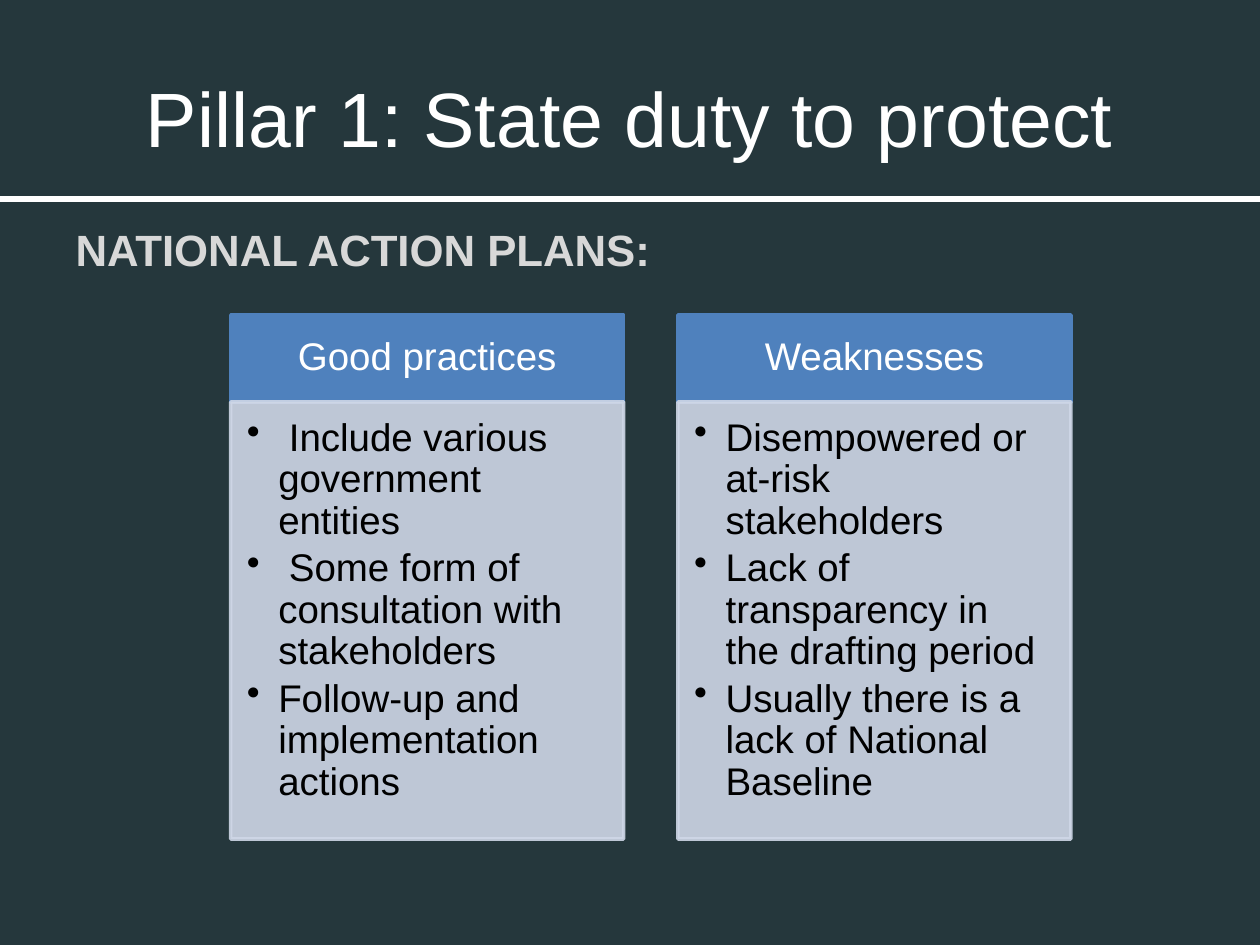
from lxml.etree import SubElement
from pptx import Presentation
from pptx.dml.color import RGBColor
from pptx.enum.shapes import MSO_CONNECTOR as CONNECTOR, MSO_SHAPE as SHAPE
from pptx.enum.text import MSO_ANCHOR as ANCHOR, MSO_AUTO_SIZE as AUTO_SIZE, PP_ALIGN as ALIGN
from pptx.oxml.ns import qn
from pptx.util import Pt

TITLE = "Pillar 1: State duty to protect"
HEADING = "NATIONAL ACTION PLANS:"
COLUMNS = [
    ("Good practices", [
        " Include various government entities",
        " Some form of consultation with stakeholders",
        "Follow-up and implementation actions",
    ]),
    ("Weaknesses", [
        "Disempowered or at-risk stakeholders",
        "Lack of transparency in the drafting period",
        "Usually there is a lack of National Baseline",
    ]),
]
BACKGROUND, WHITE, BLACK, GREY = "25373C", "FFFFFF", "000000", "D8D8D8"
BLUE, PALE = "4F81BD", "CFD7E7"
COLUMN_LEFT, COLUMN_STEP, COLUMN_WIDTH = 131.8, 255.6, 224.6
HEADER_TOP, HEADER_HEIGHT, LIST_HEIGHT = 180, 49.7, 249.8
OPACITY = 90


def color(value):
    return RGBColor.from_string(value)


def place(shape, left, top, width, height):
    shape.left, shape.top = Pt(left), Pt(top)
    shape.width, shape.height = Pt(width), Pt(height)


def set_frame(frame, lines, anchor, margins=(7.2, 3.6, 7.2, 3.6)):
    frame.word_wrap = True
    frame.auto_size = AUTO_SIZE.NONE
    frame.vertical_anchor = anchor
    (frame.margin_left, frame.margin_top,
     frame.margin_right, frame.margin_bottom) = map(Pt, margins)
    frame.text = "\n".join(lines)


def style(paragraph, size, ink, align=ALIGN.LEFT, bold=False, spacing=1.0, before=0):
    font = paragraph.font
    font.name, font.size, font.bold = "Arial", Pt(size), bold
    font.color.rgb = color(ink)
    paragraph.alignment = align
    paragraph.line_spacing = spacing
    paragraph.space_before = Pt(before)


def set_bullet(paragraph, indent, character=None):
    properties = paragraph._p.get_or_add_pPr()
    properties.set("marL", str(Pt(indent)))
    properties.set("indent", str(-Pt(indent)))
    if character:
        bullet = properties.makeelement(qn("a:buChar"), {"char": character})
    else:
        bullet = properties.makeelement(qn("a:buNone"), {})
    properties.insert_element_before(bullet, "a:tabLst", "a:defRPr", "a:extLst")


def add_box(slide, left, top, height, fill, opacity=100):
    box = slide.shapes.add_shape(SHAPE.RECTANGLE, Pt(left), Pt(top), Pt(COLUMN_WIDTH), Pt(height))
    box.shadow.inherit = False
    box.fill.solid()
    box.fill.fore_color.rgb = color(fill)
    box.line.color.rgb = color(fill)
    box.line.width = Pt(2)
    if opacity < 100:
        for tone in box._element.spPr.iter(qn("a:srgbClr")):
            SubElement(tone, qn("a:alpha"), val=str(opacity * 1000))
    return box


def add_column(slide, left, header, items):
    header_box = add_box(slide, left, HEADER_TOP, HEADER_HEIGHT, BLUE)
    set_frame(header_box.text_frame, [header], ANCHOR.MIDDLE, (12.3, 7, 12.3, 7))
    style(header_box.text_frame.paragraphs[0], 22, WHITE, ALIGN.CENTER, spacing=0.9)

    list_box = add_box(slide, left, HEADER_TOP + HEADER_HEIGHT, LIST_HEIGHT, PALE, OPACITY)
    set_frame(list_box.text_frame, items, ANCHOR.TOP, (9.2, 9.2, 12.3, 13.9))
    for index, paragraph in enumerate(list_box.text_frame.paragraphs):
        style(paragraph, 22, BLACK, spacing=0.9, before=3.3 if index else 0)
        set_bullet(paragraph, 18, "•")


def main():
    """Build the slide on national action plans."""
    presentation = Presentation()
    presentation.slide_width, presentation.slide_height = Pt(720), Pt(540)
    slide = presentation.slides.add_slide(presentation.slide_layouts[1])
    slide.background.fill.solid()
    slide.background.fill.fore_color.rgb = color(BACKGROUND)

    title, body = slide.placeholders
    place(title, 36, 21.6, 648, 90)
    set_frame(title.text_frame, [TITLE], ANCHOR.MIDDLE)
    style(title.text_frame.paragraphs[0], 44, WHITE, ALIGN.CENTER)

    place(body, 36, 123.8, 561, 374.4)
    set_frame(body.text_frame, [HEADING], ANCHOR.TOP)
    style(body.text_frame.paragraphs[0], 25, GREY, bold=True)
    set_bullet(body.text_frame.paragraphs[0], 0)

    rule = slide.shapes.add_connector(CONNECTOR.STRAIGHT, 0, Pt(113.8), Pt(720), Pt(113.8))
    rule.line.color.rgb = color(WHITE)
    rule.line.width = Pt(3)
    SubElement(rule._element.spPr, qn("a:effectLst"))

    for index, (header, items) in enumerate(COLUMNS):
        add_column(slide, COLUMN_LEFT + index * COLUMN_STEP, header, items)

    presentation.save("out.pptx")


if __name__ == "__main__":
    main()
